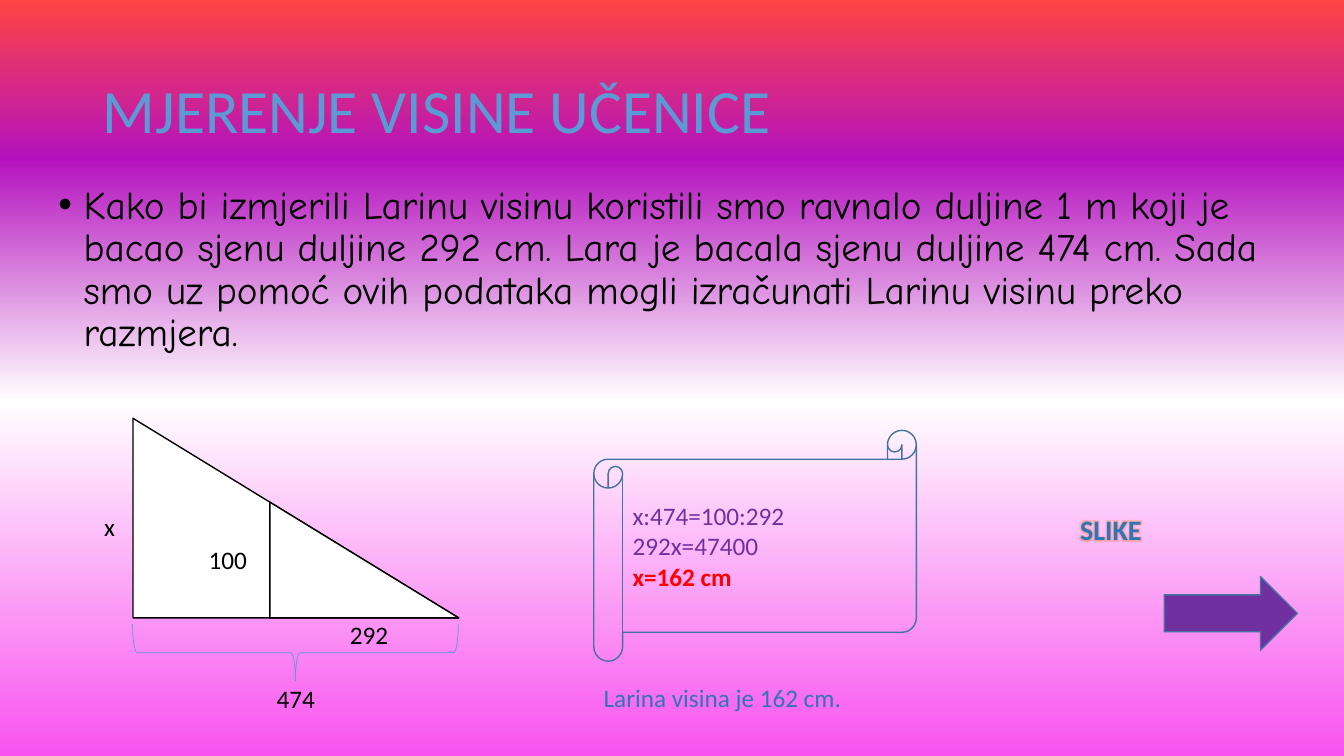
from dataclasses import dataclass

from lxml.etree import SubElement
from pptx import Presentation
from pptx.dml.color import RGBColor
from pptx.enum.shapes import MSO_SHAPE
from pptx.enum.text import MSO_ANCHOR, MSO_AUTO_SIZE, PP_ALIGN
from pptx.oxml import parse_xml
from pptx.oxml.ns import nsdecls, qn
from pptx.util import Inches, Pt

SLIDE_WIDTH, SLIDE_HEIGHT = Inches(13.33), Inches(7.5)


@dataclass(frozen=True)
class Theme:
    font: str = "Calibri"
    body_font: str = "Comic Neue"
    title_size: int = 44
    body_size: int = 28
    link_size: int = 20
    label_size: int = 18
    black: str = "000000"
    white: str = "FFFFFF"
    sky: str = "5B9BD5"
    blue: str = "2E75B6"
    outline: str = "43739E"
    purple: str = "7030A0"
    red: str = "FF0000"
    glow: str = "ED7D31"
    background: tuple = ((0, "FE4444"), (21, "B412BE"), (53, "FFFFFF"), (100, "F953EF"))


THEME = Theme()


def place(left, top, width, height):
    """Turn percentages of the slide's size into lengths."""
    return (int(SLIDE_WIDTH * left / 100), int(SLIDE_HEIGHT * top / 100),
            int(SLIDE_WIDTH * width / 100), int(SLIDE_HEIGHT * height / 100))


def move(shape, box):
    shape.left, shape.top, shape.width, shape.height = place(*box)


def format_paragraph(paragraph, size, color, font=THEME.font, bold=False,
                     align=PP_ALIGN.LEFT):
    paragraph.alignment = align
    for run in paragraph.runs:
        run.font.name = font
        run.font.size = Pt(size)
        run.font.bold = bold
        run.font.color.rgb = RGBColor.from_string(color)


def paint_background(slide):
    fill = slide.background.fill
    fill.gradient()
    gradient = slide.background._cSld.find(".//" + qn("a:gradFill"))
    stops = gradient.find(qn("a:gsLst"))
    for stop in list(stops):
        stops.remove(stop)
    for position, color in THEME.background:
        stop = SubElement(stops, qn("a:gs"), pos=str(position * 1000))
        SubElement(stop, qn("a:srgbClr"), val=color)
    fill.gradient_angle = 270


def fill_placeholder(placeholder, box, text, anchor, **style):
    move(placeholder, box)
    frame = placeholder.text_frame
    frame.text = text
    frame.word_wrap = True
    frame.auto_size = MSO_AUTO_SIZE.NONE
    frame.vertical_anchor = anchor
    paragraph = frame.paragraphs[0]
    paragraph.line_spacing = 0.9
    format_paragraph(paragraph, **style)
    return paragraph


def add_figure(slide, kind, box, line, fill=None, line_width=1):
    shape = slide.shapes.add_shape(kind, *place(*box))
    shape.shadow.inherit = False
    shape.line.color.rgb = RGBColor.from_string(line)
    shape.line.width = Pt(line_width)
    if fill:
        shape.fill.solid()
        shape.fill.fore_color.rgb = RGBColor.from_string(fill)
    else:
        shape.fill.background()
    return shape


def add_label(slide, box, text, size=THEME.label_size, color=THEME.black,
              bold=False, align=PP_ALIGN.CENTER):
    frame = slide.shapes.add_textbox(*place(*box)).text_frame
    frame.word_wrap = True
    frame.vertical_anchor = MSO_ANCHOR.MIDDLE
    frame.text = text
    format_paragraph(frame.paragraphs[0], size, color, bold=bold, align=align)
    return frame.paragraphs[0]


def add_glow(run):
    run.font.fill._xPr.find(qn("a:solidFill")).addnext(parse_xml(
        f'<a:effectLst {nsdecls("a")}><a:glow rad="63500">'
        f'<a:srgbClr val="{THEME.glow}"><a:alpha val="40000"/></a:srgbClr>'
        '</a:glow></a:effectLst>'))


def add_triangles(slide):
    """Draw two similar triangles that share the right-hand corner."""
    left, top, width, height = 9.9, 55.33, 24.23, 26.4
    for scale in (1, 0.58):
        box = (left + width * (1 - scale), top + height * (1 - scale),
               width * scale, height * scale)
        add_figure(slide, MSO_SHAPE.RIGHT_TRIANGLE, box, THEME.black, THEME.white)
    for text, label_left, label_top, label_width in (
            ("474", 18.75, 90.13, 6.5), ("100", 13.95, 71.87, 6),
            ("x", 6.45, 67.47, 3.4), ("292", 24.45, 81.73, 6)):
        add_label(slide, (label_left, label_top, label_width, 4.4), text)
    brace = add_figure(slide, MSO_SHAPE.LEFT_BRACE, (19.88, 64.8, 4.2, 43.07),
                       THEME.sky, line_width=0.5)
    brace.rotation = 270


def add_calculation(slide):
    scroll = add_figure(slide, MSO_SHAPE.HORIZONTAL_SCROLL,
                        (44.18, 56.93, 24, 30.53), THEME.outline)
    frame = scroll.text_frame
    frame.vertical_anchor = MSO_ANCHOR.MIDDLE
    frame.text = "x:474=100:292\n292x=47400\nx=162 cm"
    *steps, result = frame.paragraphs
    for step in steps:
        format_paragraph(step, THEME.label_size, THEME.purple)
    format_paragraph(result, THEME.label_size, THEME.red, bold=True)
    add_label(slide, (44.18, 88.8, 24, 6.93), "Larina visina je 162 cm.",
              color=THEME.blue, align=PP_ALIGN.LEFT)


def main():
    presentation = Presentation()
    presentation.slide_width, presentation.slide_height = SLIDE_WIDTH, SLIDE_HEIGHT
    slide = presentation.slides.add_slide(presentation.slide_layouts[1])
    paint_background(slide)

    fill_placeholder(slide.shapes.title, (6.9, 5.33, 86.25, 19.33),
                     "MJERENJE VISINE UČENICE", MSO_ANCHOR.MIDDLE,
                     size=THEME.title_size, color=THEME.sky)
    story = fill_placeholder(
        slide.placeholders[1], (3.6, 23.87, 92.78, 70.53),
        "Kako bi izmjerili Larinu visinu koristili smo ravnalo duljine 1 m koji je "
        "bacao sjenu duljine 292 cm. Lara je bacala sjenu duljine 474 cm. Sada smo "
        "uz pomoć ovih podataka mogli izračunati Larinu visinu preko razmjera.",
        MSO_ANCHOR.TOP, size=THEME.body_size, color=THEME.black, font=THEME.body_font)
    story.space_before = Pt(10)
    indent = Inches(0.25)
    properties = story._p.get_or_add_pPr()
    properties.set("marL", str(indent))
    properties.set("indent", str(-indent))

    add_triangles(slide)
    add_calculation(slide)
    link = add_label(slide, (74.48, 55.33, 16.35, 29.33), "SLIKE",
                     size=THEME.link_size, color=THEME.blue, bold=True)
    add_glow(link.runs[0])
    add_figure(slide, MSO_SHAPE.RIGHT_ARROW, (86.63, 76.27, 9.9, 9.73),
               THEME.outline, THEME.purple)
    presentation.save("out.pptx")


if __name__ == "__main__":
    main()
